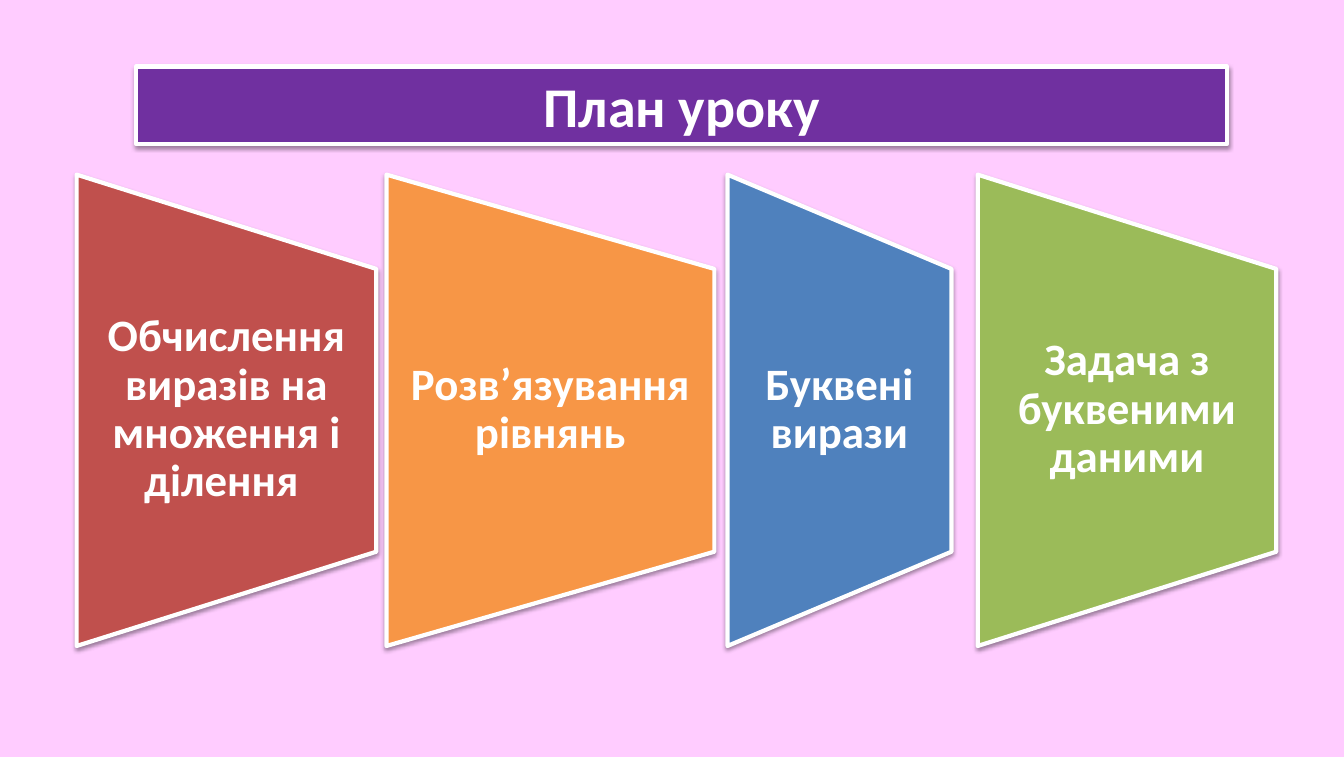
from dataclasses import dataclass

from lxml.etree import SubElement
from pptx import Presentation
from pptx.dml.color import RGBColor
from pptx.enum.shapes import MSO_SHAPE
from pptx.enum.text import MSO_ANCHOR, MSO_AUTO_SIZE, PP_ALIGN
from pptx.oxml.ns import qn
from pptx.util import Emu, Pt

EMU_PER_PX = 9144
PANEL_TOP, PANEL_HEIGHT = 173, 467
TEXT_TOP, TEXT_HEIGHT = 266, 280


@dataclass(frozen=True)
class Theme:
    """Colours, font and type sizes of the slide."""

    background: str = "FFCCFF"
    banner: str = "7030A0"
    red: str = "C0504D"
    orange: str = "F79646"
    blue: str = "4F81BD"
    green: str = "9BBB59"
    light: str = "FFFFFF"
    shadow: str = "000000"
    font: str = "Calibri"
    title_size: int = 40
    step_size: int = 32
    outline: int = 3


THEME = Theme()


def px(length):
    """Turn a length in px into EMU."""
    return Emu(round(length * EMU_PER_PX))


def add_shadow(shape):
    """Give a shape a soft shadow straight below it."""
    shape.shadow.inherit = False
    effects = shape._element.spPr.find(qn("a:effectLst"))
    outer = SubElement(effects, qn("a:outerShdw"), blurRad="40000",
                       dist="20000", dir="5400000", rotWithShape="0")
    colour = SubElement(outer, qn("a:srgbClr"), val=THEME.shadow)
    SubElement(colour, qn("a:alpha"), val="38000")


def add_block(page, kind, left, top, width, height, fill):
    """Add a filled shape with a light outline and a shadow."""
    block = page.shapes.add_shape(kind, px(left), px(top), px(width), px(height))
    block.fill.solid()
    block.fill.fore_color.rgb = RGBColor.from_string(fill)
    block.line.color.rgb = RGBColor.from_string(THEME.light)
    block.line.width = Pt(THEME.outline)
    add_shadow(block)
    return block


def write_text(box, text, *, size, anchor, spacing=1.0):
    """Write one bold centred paragraph into a box."""
    frame = box.text_frame
    frame.word_wrap = True
    frame.vertical_anchor = anchor
    para = frame.paragraphs[0]
    para.alignment = PP_ALIGN.CENTER
    para.line_spacing = spacing
    span = para.add_run()
    span.text = text
    span.font.name = THEME.font
    span.font.size = Pt(size)
    span.font.bold = True
    span.font.color.rgb = RGBColor.from_string(THEME.light)
    return frame


def add_banner(page, text):
    """Add the title banner."""
    banner = add_block(page, MSO_SHAPE.RECTANGLE, 135, 66, 1081, 77, THEME.banner)
    frame = write_text(banner, text, size=THEME.title_size, anchor=MSO_ANCHOR.TOP)
    frame.auto_size = MSO_AUTO_SIZE.SHAPE_TO_FIT_TEXT


def add_step(page, left, width, fill, text):
    """Add one lesson step: a trapezoid turned on its side, with its label."""
    shift = (PANEL_HEIGHT - width) / 2
    panel = add_block(page, MSO_SHAPE.FLOWCHART_MANUAL_OPERATION, left - shift,
                      PANEL_TOP + shift, PANEL_HEIGHT, width, fill)
    panel.rotation = 270
    label = page.shapes.add_textbox(px(left), px(TEXT_TOP), px(width), px(TEXT_HEIGHT))
    frame = write_text(label, text, size=THEME.step_size,
                       anchor=MSO_ANCHOR.MIDDLE, spacing=0.9)
    frame.margin_left = frame.margin_right = px(22)
    frame.margin_top = frame.margin_bottom = 0


def main():
    """Build the lesson plan slide and save it."""
    deck = Presentation()
    deck.slide_width, deck.slide_height = px(1332), px(750)
    page = deck.slides.add_slide(deck.slide_layouts[6])
    page.background.fill.solid()
    page.background.fill.fore_color.rgb = RGBColor.from_string(THEME.background)
    add_banner(page, "План уроку")
    steps = [
        (76, 297, THEME.red, "Обчислення виразів на множення і ділення "),
        (383, 325, THEME.orange, "Розв’язування рівнянь"),
        (721, 222, THEME.blue, "Буквені вирази"),
        (969, 296, THEME.green, "Задача з буквеними даними"),
    ]
    for left, width, fill, text in steps:
        add_step(page, left, width, fill, text)
    deck.save("out.pptx")


if __name__ == "__main__":
    main()
